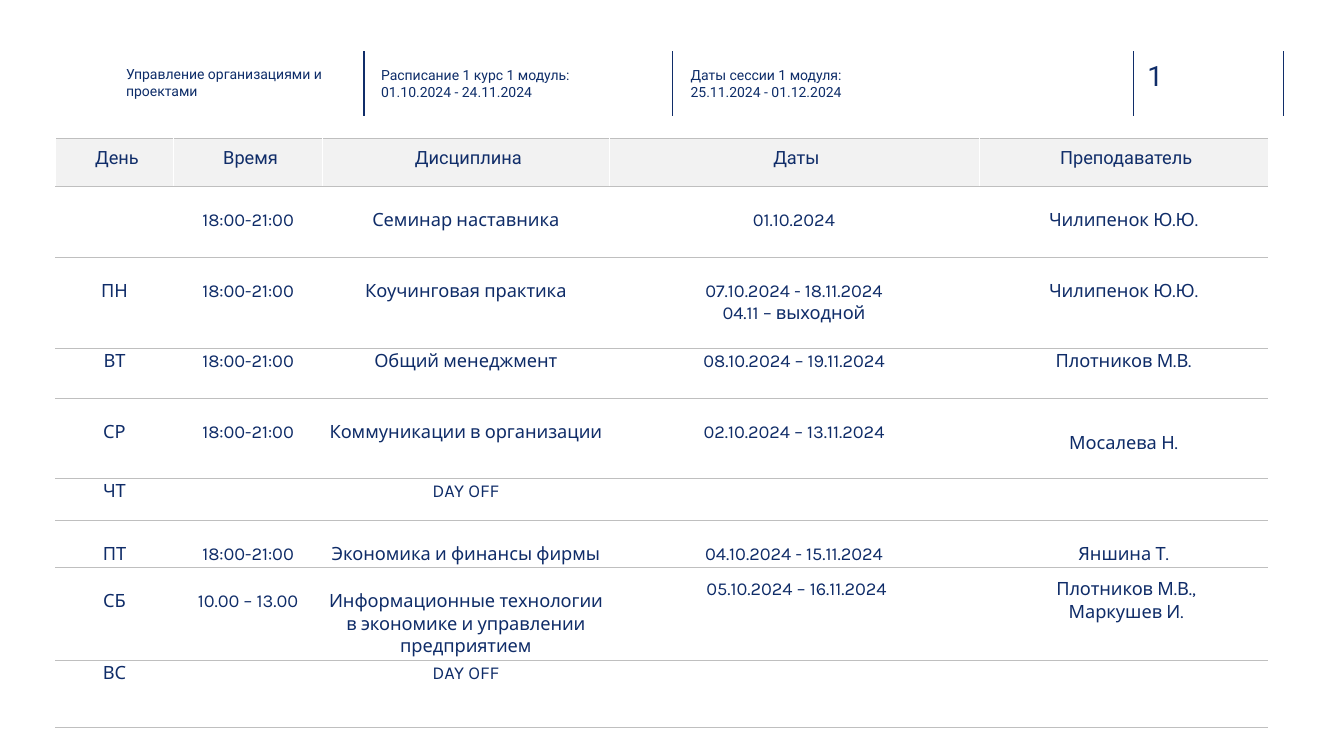
from lxml.etree import SubElement
from pptx import Presentation
from pptx.dml.color import RGBColor
from pptx.enum.shapes import MSO_CONNECTOR
from pptx.enum.text import MSO_ANCHOR, PP_ALIGN
from pptx.oxml.ns import qn
from pptx.util import Inches, Pt

NAVY, INK, TEXT = "102D69", "0E2D69", "0F2C68"
GREY, WHITE, HEAD_FILL = "BFBFBF", "FFFFFF", "F2F2F2"

RULES = (3.61, 6.67, 11.24, 12.73)
LABELS = (
    (1.25, 0.59, 2.08, "Управление организациями и проектами"),
    (3.78, 0.6, 2.26, "Расписание 1 курс 1 модуль: 01.10.2024 - 24.11.2024"),
    (6.85, 0.6, 3.36, "Даты сессии 1 модуля:\n25.11.2024 - 01.12.2024"),
)

COLS = (1.17, 1.48, 2.84, 3.67, 2.87)
HEAD = ("День", "Время", "Дисциплина", "Даты", "Преподаватель")
EVENING = "18:00-21:00"
HIGH, LOW = 0.01, 0.22  # top margins of body text
# row height, top margin, cell texts
ROWS = (
    (0.7, LOW, ("", EVENING, "Семинар наставника", "01.10.2024", "Чилипенок Ю.Ю.")),
    (0.91, LOW, ("ПН", EVENING, "Коучинговая практика",
                 "07.10.2024 - 18.11.2024\n04.11 – выходной", "Чилипенок Ю.Ю.")),
    (0.49, HIGH, ("ВТ", EVENING, "Общий менеджмент",
                  "08.10.2024 – 19.11.2024", "Плотников М.В.")),
    (0.8, LOW, ("СР", EVENING, "Коммуникации в организации",
                "02.10.2024 – 13.11.2024", "Мосалева Н.")),
    (0.41, HIGH, ("ЧТ", "", "DAY OFF", "", "")),
    (0.47, LOW, ("ПТ", EVENING, "Экономика и финансы фирмы",
                 "04.10.2024 - 15.11.2024", "Яншина Т.")),
    (0.92, LOW, ("СБ", "10.00 – 13.00",
                 "Информационные технологии в экономике и управлении предприятием",
                 "05.10.2024 – 16.11.2024", "Плотников М.В.,\nМаркушев И.")),
    (0.66, HIGH, ("ВС", "", "DAY OFF", "", "")),
)
HEAD_HEIGHT = 0.48
WIDE = (0.1, 0.1, 0.05, 0.05)
# (row, column): margins left, top, right, bottom
MARGINS = {(4, 4): (0.01, 0.33, 0.01, 0.01), (7, 3): WIDE, (7, 4): WIDE}


def rgb(value):
    return RGBColor.from_string(value)


def set_all(obj, values):
    for name, value in values.items():
        setattr(obj, name, value)


def set_margins(obj, margins):
    for side, value in zip(("left", "top", "right", "bottom"), margins):
        setattr(obj, f"margin_{side}", Inches(value))


def write(tf, text, font, size, color, **paragraph):
    """Fill a text frame, one paragraph per line of text."""
    for i, line in enumerate(text.split("\n")):
        p = tf.paragraphs[0] if i == 0 else tf.add_paragraph()
        set_all(p, paragraph)
        r = p.add_run()
        r.text = line
        set_all(r.font, {"name": font, "size": Pt(size)})
        r.font.color.rgb = rgb(color)


def add_label(s, box, text, size, color):
    tf = s.shapes.add_textbox(*map(Inches, box)).text_frame
    set_all(tf, {"word_wrap": True, "vertical_anchor": MSO_ANCHOR.MIDDLE})
    set_margins(tf, (0, 0, 0, 0))
    write(tf, text, "Roboto", size, color)


def add_header(s, top, height):
    for x in RULES:
        line = s.shapes.add_connector(MSO_CONNECTOR.STRAIGHT, Inches(x), Inches(top),
                                      Inches(x), Inches(top + height))
        line.line.width = Pt(1)
        line.line.color.rgb = rgb(NAVY)
        SubElement(line._element.spPr, qn("a:effectLst"))
    for x, y, width, text in LABELS:
        add_label(s, (x, y, width, 0.45), text, 10, INK)
    add_label(s, (11.38, 0.58, 0.73, 0.34), "1", 20, NAVY)


def set_borders(cell):
    """Draw white side borders and grey top and bottom ones."""
    tcPr = cell._tc.get_or_add_tcPr()
    sides = (("L", WHITE, 0.25), ("R", WHITE, 0.25), ("T", GREY, 0.75), ("B", GREY, 0.75))
    for side, color, width in sides:
        ln = SubElement(tcPr, qn(f"a:ln{side}"), w=str(Pt(width)))
        fill = SubElement(ln, qn("a:solidFill"))
        SubElement(fill, qn("a:srgbClr"), val=color)


def style_cell(cell, row, col, text, top):
    set_borders(cell)
    if row == 0:
        cell.fill.solid()
        cell.fill.fore_color.rgb = rgb(HEAD_FILL)
        margins, font, color, spacing = WIDE, "Roboto", NAVY, 1.0
    else:
        cell.fill.background()
        margins = MARGINS.get((row, col), (0.01, top, 0.01, 0.01))
        font, color, spacing = "Karla", TEXT, 1.07
    set_margins(cell, margins)
    if text:
        write(cell.text_frame, text, font, 13, color,
              alignment=PP_ALIGN.CENTER, line_spacing=spacing)


def add_schedule(s, left, top):
    rows = ((HEAD_HEIGHT, HIGH, HEAD),) + ROWS
    height = sum(row[0] for row in rows)
    table = s.shapes.add_table(len(rows), len(COLS), Inches(left), Inches(top),
                               Inches(sum(COLS)), Inches(height)).table
    set_all(table, {"first_row": False, "horz_banding": False})
    for column, width in zip(table.columns, COLS):
        column.width = Inches(width)
    for i, (row_height, margin, texts) in enumerate(rows):
        table.rows[i].height = Inches(row_height)
        for j, text in enumerate(texts):
            style_cell(table.cell(i, j), i, j, text, margin)


def main():
    prs = Presentation()
    set_all(prs, {"slide_width": Inches(13.33), "slide_height": Inches(7.5)})
    s = prs.slides.add_slide(prs.slide_layouts[6])
    add_header(s, 0.51, 0.64)
    add_schedule(s, 0.55, 1.37)
    prs.save("out.pptx")


if __name__ == "__main__":
    main()
